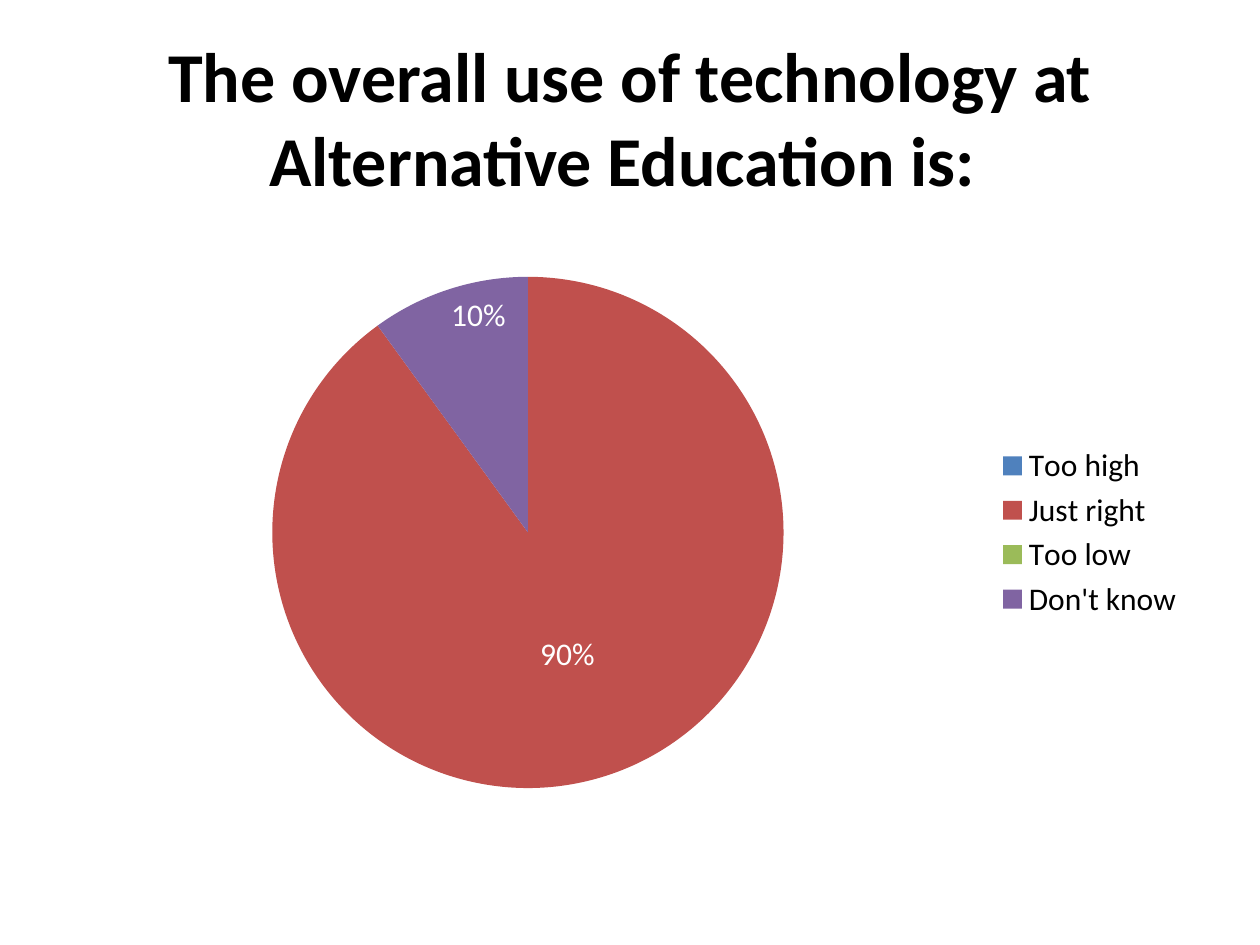
from lxml import etree
from pptx import Presentation
from pptx.chart.data import CategoryChartData
from pptx.dml.color import RGBColor
from pptx.enum.chart import XL_CHART_TYPE, XL_LABEL_POSITION, XL_LEGEND_POSITION
from pptx.enum.text import MSO_ANCHOR, PP_ALIGN
from pptx.oxml.ns import qn
from pptx.util import Cm, Pt

PIE = XL_CHART_TYPE.PIE
RIGHT = XL_LEGEND_POSITION.RIGHT
MID, EDGE = XL_LABEL_POSITION.CENTER, XL_LABEL_POSITION.INSIDE_END
CENTER, MIDDLE = PP_ALIGN.CENTER, MSO_ANCHOR.MIDDLE
TITLE_ONLY = 5

COLORS = {"text": "000000", "label": "FFFFFF", "high": "4F81BD",
          "right": "C0504D", "low": "9BBB59", "unsure": "8064A2"}
# Answer, share, colour
ANSWERS = [("Too high", 0, "high"), ("Just right", 0.9, "right"),
           ("Too low", 0, "low"), ("Don't know", 0.1, "unsure")]


class Deck:
    face = "Calibri"

    def __init__(self, wide, high):
        self.prs = Presentation()
        self.prs.slide_width, self.prs.slide_height = Cm(wide), Cm(high)
        self.slide = self.prs.slides.add_slide(self.prs.slide_layouts[TITLE_ONLY])

    def color(self, key):
        return RGBColor.from_string(COLORS[key])

    def style(self, font, size, key, bold=False):
        for name, value in {"name": self.face, "size": Pt(size), "bold": bold}.items():
            setattr(font, name, value)
        font.color.rgb = self.color(key)

    def title(self, text, left, top, width, height):
        box = self.slide.shapes.title
        spot = {"left": left, "top": top, "width": width, "height": height}
        for name, value in spot.items():
            setattr(box, name, Cm(value))
        frame = box.text_frame
        frame.text = text
        frame.vertical_anchor = MIDDLE
        para = frame.paragraphs[0]
        para.alignment = CENTER
        self.style(para.runs[0].font, 40, "text", True)

    def pie(self, rows, left, top, width, height, area):
        names, shares, keys = zip(*rows)
        data = CategoryChartData(number_format="0%")
        data.categories = names
        data.add_series("Series 1", shares)
        spot = [Cm(n) for n in (left, top, width, height)]
        chart = self.slide.shapes.add_chart(PIE, *spot, data).chart
        self.style(chart.font, 18, "text")
        chart.has_title = False
        chart.has_legend = True
        chart.legend.position = RIGHT
        chart.legend.include_in_layout = False
        chart.plots[0].vary_by_categories = True

        # Slices, with labels that stay blank for zero
        series = chart.plots[0].series[0]
        labels = series.data_labels
        labels.show_value = True
        labels.number_format = "0%;;"
        labels.number_format_is_linked = False
        labels.position = EDGE
        self.style(labels.font, 18, "label")
        for i, key in enumerate(keys):
            fill = series.points[i].format.fill
            fill.solid()
            fill.fore_color.rgb = self.color(key)
        main = series.points[shares.index(max(shares))].data_label
        self.style(main.font, 18, "label")
        main.position = MID
        self.place(chart, area)

    def place(self, chart, area):
        plot = chart.plots[0]._element.getparent()
        for old in plot.findall(qn("c:layout")):
            plot.remove(old)
        layout = etree.Element(qn("c:layout"))
        plot.insert(0, layout)
        manual = etree.SubElement(layout, qn("c:manualLayout"))
        rules = {"layoutTarget": "inner", "xMode": "edge", "yMode": "edge", **area}
        for tag, value in rules.items():
            etree.SubElement(manual, qn("c:" + tag)).set("val", str(value))


def main():
    deck = Deck(25.4, 19.05)
    # Question
    deck.title("The overall use of technology at Alternative Education is: ",
               0, 0.76, 25.4, 3.18)
    # Answers
    deck.pie(ANSWERS, 1.27, 4.45, 22.86, 12.57,
             {"x": 0.18, "y": 0.09, "w": 0.46, "h": 0.82})
    deck.prs.save("out.pptx")


if __name__ == "__main__":
    main()
